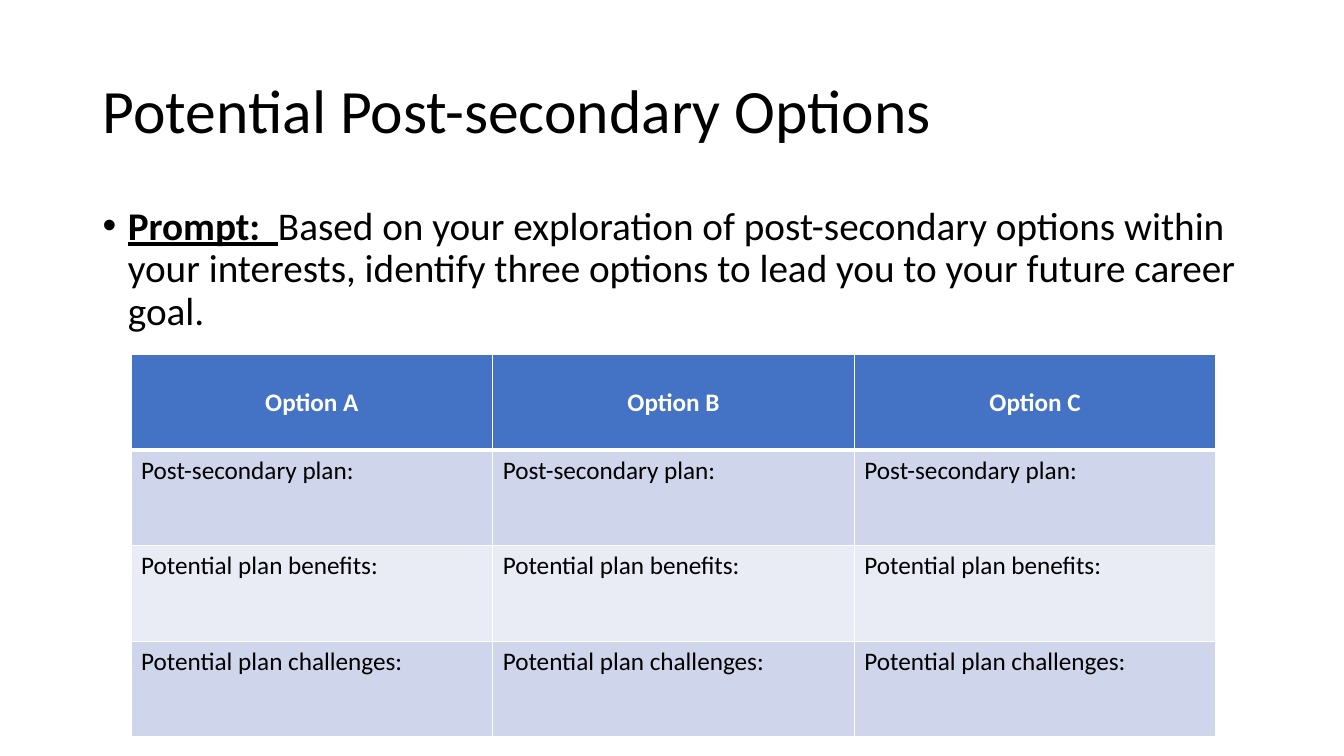
from lxml.etree import SubElement
from pptx import Presentation
from pptx.dml.color import RGBColor
from pptx.enum.text import MSO_ANCHOR, PP_ALIGN
from pptx.oxml.ns import qn
from pptx.util import Inches, Pt

BLACK = RGBColor(0x00, 0x00, 0x00)
WHITE = RGBColor(0xFF, 0xFF, 0xFF)
HEADER_BLUE = RGBColor(0x44, 0x72, 0xC4)
BAND_DARK = RGBColor(0xCF, 0xD5, 0xEA)
BAND_LIGHT = RGBColor(0xE9, 0xEB, 0xF5)

OPTIONS = ["Option A", "Option B", "Option C"]
PLAN_ROWS = [
    "Post-secondary plan:",
    "Potential plan benefits:",
    "Potential plan challenges:",
]


class SlideBuilder:
    font_name = "Calibri"

    def __init__(self, slide):
        self.slide = slide

    def style(self, paragraph, size, color=BLACK, bold=None):
        font = paragraph.font
        font.name = self.font_name
        font.size = Pt(size)
        font.color.rgb = color
        font.bold = bold

    def text_box(self, left, top, width, height, size, anchor=MSO_ANCHOR.TOP):
        box = self.slide.shapes.add_textbox(
            Inches(left), Inches(top), Inches(width), Inches(height)
        )
        frame = box.text_frame
        frame.word_wrap = True
        frame.vertical_anchor = anchor
        paragraph = frame.paragraphs[0]
        paragraph.line_spacing = 0.9
        self.style(paragraph, size)
        return paragraph

    def title(self, text):
        heading = self.text_box(0.92, 0.4, 11.5, 1.45, 44, MSO_ANCHOR.MIDDLE)
        heading.add_run().text = text

    def prompt(self, label, text):
        prompt = self.text_box(0.92, 2, 11.5, 4.76, 28)
        prompt.space_before = Pt(10)
        properties = prompt._p.get_or_add_pPr()
        properties.set("marL", str(Inches(0.25)))
        properties.set("indent", str(Inches(-0.25)))
        bullet_font = properties.makeelement(qn("a:buFont"), {"typeface": "Arial"})
        bullet = properties.makeelement(qn("a:buChar"), {"char": "•"})
        default_font = properties.find(qn("a:defRPr"))
        default_font.addprevious(bullet_font)
        default_font.addprevious(bullet)
        lead = prompt.add_run()
        lead.text = label
        lead.font.bold = True
        lead.font.underline = True
        prompt.add_run().text = text

    def borders(self, cell, bottom):
        properties = cell._tc.get_or_add_tcPr()
        for side, width in (("L", 1), ("R", 1), ("T", 1), ("B", bottom)):
            line = SubElement(properties, qn(f"a:ln{side}"), w=str(Pt(width)))
            fill = SubElement(line, qn("a:solidFill"))
            SubElement(fill, qn("a:srgbClr"), val=str(WHITE))

    def cell(self, cell, text, fill, header):
        self.borders(cell, 3 if header else 1)
        cell.fill.solid()
        cell.fill.fore_color.rgb = fill
        cell.text = text
        paragraph = cell.text_frame.paragraphs[0]
        self.style(paragraph, 18, WHITE if header else BLACK, header)
        if header:
            cell.vertical_anchor = MSO_ANCHOR.MIDDLE
            paragraph.alignment = PP_ALIGN.CENTER

    def options_table(self, options, plan_rows):
        rows = [options] + [[label] * len(options) for label in plan_rows]
        table = self.slide.shapes.add_table(
            len(rows), len(options),
            Inches(1.3), Inches(3.52), Inches(10.76), Inches(3.79),
        ).table
        for row_index, labels in enumerate(rows):
            header = row_index == 0
            band = BAND_DARK if row_index % 2 else BAND_LIGHT
            fill = HEADER_BLUE if header else band
            for column_index, label in enumerate(labels):
                self.cell(table.cell(row_index, column_index), label, fill, header)


def main():
    presentation = Presentation()
    presentation.slide_width = Inches(13.33)
    presentation.slide_height = Inches(7.5)
    builder = SlideBuilder(presentation.slides.add_slide(presentation.slide_layouts[6]))
    builder.title("Potential Post-secondary Options")
    builder.prompt(
        "Prompt:  ",
        "Based on your exploration of post-secondary options within your interests, "
        "identify three options to lead you to your future career goal.",
    )
    builder.options_table(OPTIONS, PLAN_ROWS)
    presentation.save("out.pptx")


if __name__ == "__main__":
    main()
